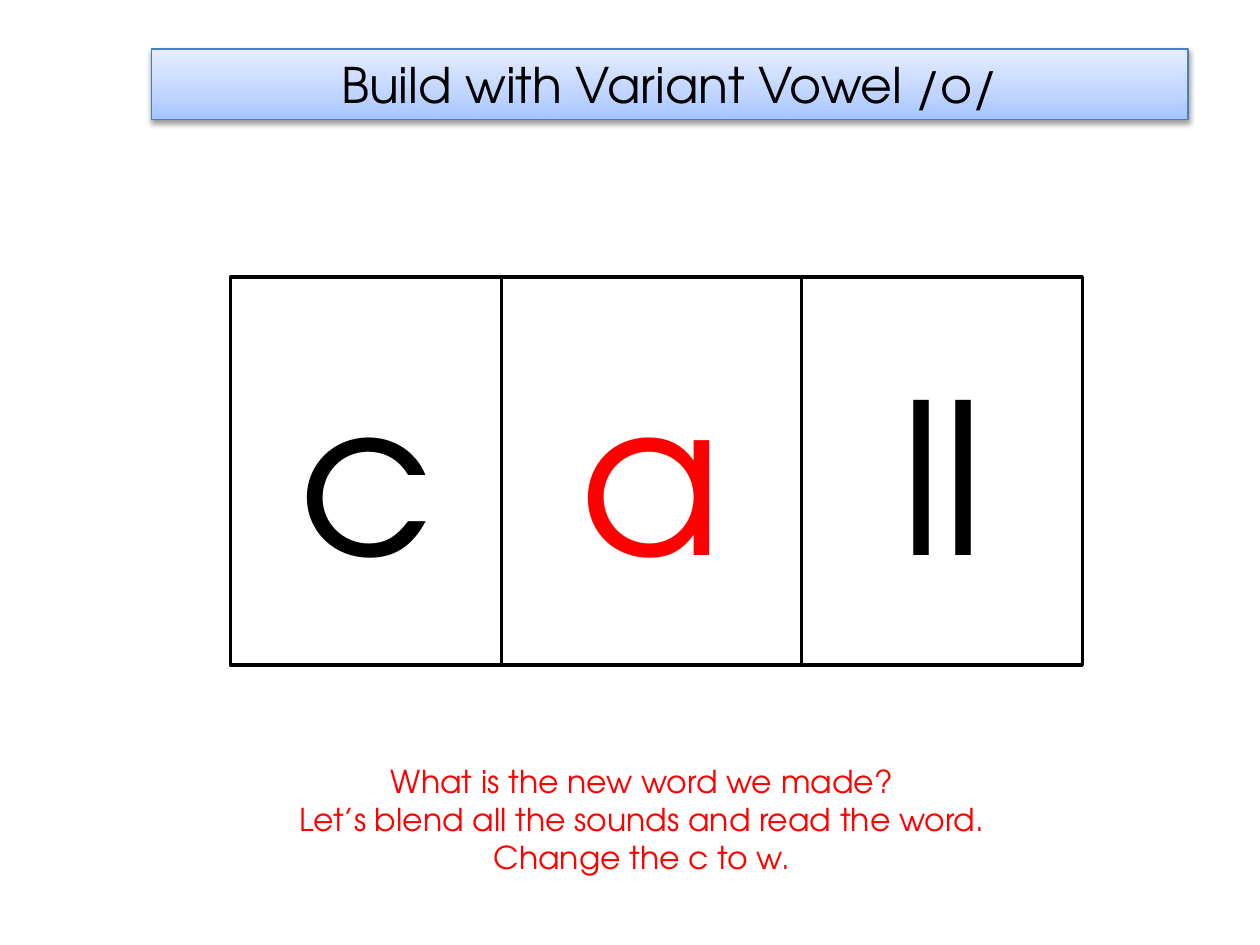
from copy import deepcopy

from lxml.etree import SubElement
from pptx import Presentation
from pptx.dml.color import RGBColor
from pptx.enum.shapes import MSO_SHAPE as Shape
from pptx.enum.text import MSO_ANCHOR as Anchor, MSO_AUTO_SIZE as AutoSize, PP_ALIGN as Align
from pptx.oxml.ns import qn
from pptx.util import Cm, Pt

TITLE = "Build with Variant Vowel /o/"
# letters, box width in cm, colour
SOUNDS = [("c", 5.46, "black"), ("a", 6.05, "red"), ("ll", 5.66, "black")]
PROMPTS = [
    "What is the new word we made?",
    "Let’s blend all the sounds and read the word.",
    "Change the c to w.",
]

FONT = "TeX Gyre Adventor"
COLORS = {"black": "000000", "red": "FF0000", "white": "FFFFFF", "border": "4B7EBC"}
BANNER_STOPS = [(0, "A4C4FF"), (0.35, "BFD4FF"), (1, "E6EEFF")]
BOXES_LEFT, BOXES_TOP, BOXES_HEIGHT = 4.65, 5.59, 7.82


def rgb(name):
    return RGBColor.from_string(COLORS[name])


def write(shape, text, size, color, anchor=Anchor.MIDDLE):
    frame = shape.text_frame
    frame.text = text
    frame.word_wrap = True
    frame.auto_size = AutoSize.NONE
    frame.vertical_anchor = anchor
    for paragraph in frame.paragraphs:
        paragraph.alignment = Align.CENTER
        for run in paragraph.runs:
            run.font.name = FONT
            run.font.size = Pt(size)
            run.font.color.rgb = rgb(color)


def outline(shape, color, width):
    shape.line.color.rgb = rgb(color)
    shape.line.width = Pt(width)


def fill_banner(shape):
    """Give the shape a three-stop gradient, lightest at the top."""
    shape.fill.gradient()
    shape.fill.gradient_angle = 90
    stop_list = next(shape.element.spPr.iter(qn("a:gsLst")))
    stop_list.append(deepcopy(stop_list[0]))
    for stop, (position, color) in zip(shape.fill.gradient_stops, BANNER_STOPS):
        stop.position = position
        stop.color.rgb = RGBColor.from_string(color)


def add_shadow(shape):
    shape.shadow.inherit = False
    effects = shape.element.spPr.find(qn("a:effectLst"))
    shadow = SubElement(effects, qn("a:outerShdw"), blurRad=str(Pt(3.1)),
                        dist=str(Pt(1.6)), dir="5400000", rotWithShape="0")
    color = SubElement(shadow, qn("a:srgbClr"), val=COLORS["black"])
    SubElement(color, qn("a:alpha"), val="38000")


def main():
    deck = Presentation()
    deck.slide_width, deck.slide_height = Cm(25.4), Cm(19.05)
    slide = deck.slides.add_slide(deck.slide_layouts.get_by_name("Title Only"))

    banner = slide.shapes.title
    banner.left, banner.top = Cm(3.05), Cm(0.99)
    banner.width, banner.height = Cm(20.9), Cm(1.42)
    fill_banner(banner)
    outline(banner, "border", 0.75)
    add_shadow(banner)
    write(banner, TITLE, 28, "black")

    left = BOXES_LEFT
    for letters, width, color in SOUNDS:
        box = slide.shapes.add_shape(Shape.RECTANGLE, Cm(left), Cm(BOXES_TOP),
                                     Cm(width), Cm(BOXES_HEIGHT))
        box.shadow.inherit = False
        box.fill.solid()
        box.fill.fore_color.rgb = rgb("white")
        outline(box, "black", 2)
        write(box, letters, 120, color)
        left += width

    prompts = slide.shapes.add_textbox(Cm(4.09), Cm(15.24), Cm(17.7), Cm(2.57))
    write(prompts, "\n".join(PROMPTS), 18, "red", Anchor.TOP)

    deck.save("out.pptx")


if __name__ == "__main__":
    main()
